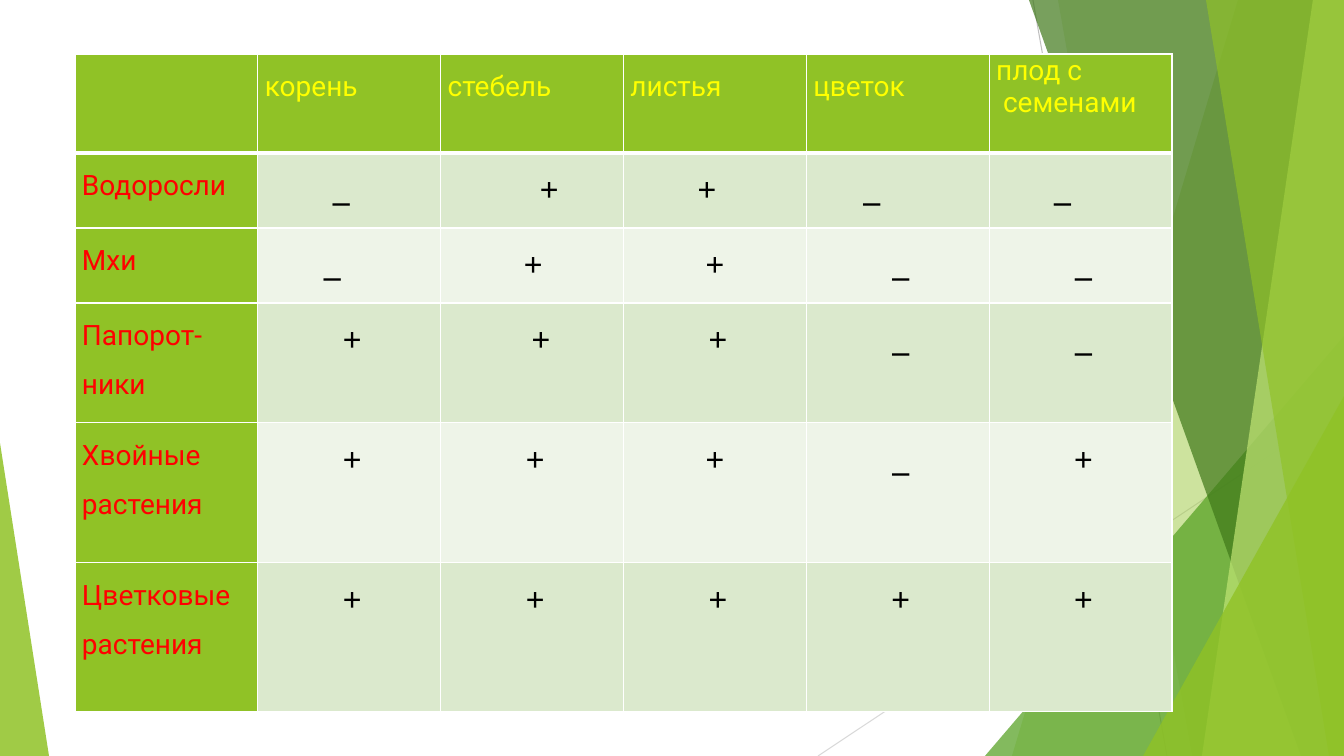
from lxml.etree import SubElement
from pptx import Presentation
from pptx.dml.color import RGBColor
from pptx.enum.shapes import MSO_CONNECTOR, MSO_SHAPE
from pptx.enum.text import PP_ALIGN
from pptx.oxml import parse_xml
from pptx.oxml.ns import nsdecls, qn
from pptx.util import Emu, Pt

EMU_PER_PX = 914400 / 100.8
COLORS = {
    "green": "90C226", "leaf": "54A021", "forest": "3F7819", "lime": "C0E474",
    "gray": "BFBFBF", "light gray": "D9D9D9", "white": "FFFFFF",
    "odd row": "DBE9CD", "even row": "EEF4E8",
    "yellow": "FFFF00", "red": "FF0000", "black": "000000",
}
FACET_LINES = [((1033, 0), (1167, 756), "gray"), ((1344, 406), (818, 756), "light gray")]
FACETS = [
    ("outline", [(1238, 0), (1344, 0), (1344, 756), (1012, 756)], "green", 30),
    ("outline", [(1058, 0), (1344, 0), (1344, 756), (1192, 756)], "green", 20),
    ("triangle", (985, 336, 359, 420, 1), "leaf", 72),
    ("outline", [(1029, 0), (1344, 0), (1344, 756), (1301, 756)], "forest", 70),
    ("outline", [(1313, 0), (1344, 0), (1344, 756), (1202, 756)], "lime", 70),
    ("outline", [(1206, 0), (1344, 0), (1344, 756), (1329, 756)], "green", 65),
    ("triangle", (1143, 396, 201, 360, 1), "green", 80),
    ("triangle", (0, 443, 49, 313, 0), "green", 85),
]
HEADERS = ["", "корень", "стебель", "листья", "цветок", "плод с\n семенами"]
PLANTS = [
    ("Водоросли", "_++__", (-8, 17, -8, -26, -18)),
    ("Мхи", "_++__", (-17, 1, 0, 3, 3)),
    ("Папорот-ники", "+++__", (3, 9, 3, 3, 3)),
    ("Хвойные растения", "+++_+", (3, 3, 0, 3, 3)),
    ("Цветковые растения", "+++++", (3, 3, 3, 3, 3)),
]
ROW_HEIGHTS = [99, 75, 75, 120, 140, 149]
CELL_MARGIN = 7


def px(length):
    """Turn pixels into EMU."""
    return Emu(round(length * EMU_PER_PX))


def color(name):
    """Look up a colour by its name."""
    return RGBColor.from_string(COLORS[name])


def paint(shape, fill, opacity):
    """Give a shape a translucent fill without line or shadow."""
    shape.shadow.inherit = False
    shape.line.fill.background()
    shape.fill.solid()
    shape.fill.fore_color.rgb = color(fill)
    tint = shape._element.spPr.find(qn("a:solidFill"))[0]
    SubElement(tint, qn("a:alpha"), val=str(opacity * 1000))


def add_facets(page, left, top):
    """Draw the thin lines and the green facets at both slide edges."""
    for (x1, y1), (x2, y2), stroke in FACET_LINES:
        line = page.shapes.add_connector(
            MSO_CONNECTOR.STRAIGHT,
            px(left + x1), px(top + y1), px(left + x2), px(top + y2))
        line.line.color.rgb = color(stroke)
        line.line.width = Pt(0.75)
        SubElement(line._element.spPr, qn("a:effectLst"))
    for kind, geometry, fill, opacity in FACETS:
        if kind == "outline":
            points = [(left + x, top + y) for x, y in geometry]
            builder = page.shapes.build_freeform(*points[0], scale=EMU_PER_PX)
            builder.add_line_segments(points[1:], close=True)
            facet = builder.convert_to_shape()
        else:
            x, y, width, height, apex = geometry
            facet = page.shapes.add_shape(
                MSO_SHAPE.ISOSCELES_TRIANGLE,
                px(left + x), px(top + y), px(width), px(height))
            facet.adjustments[0] = apex
        paint(facet, fill, opacity)


def set_borders(cell, bottom):
    """Draw white borders, with the bottom one of the given points."""
    properties = cell._tc.get_or_add_tcPr()
    widths = {"lnL": 1, "lnR": 1, "lnT": 1, "lnB": bottom}
    for position, (side, points) in enumerate(widths.items()):
        properties.insert(position, parse_xml(
            f'<a:{side} {nsdecls("a")} w="{Pt(points)}"><a:solidFill>'
            f'<a:srgbClr val="{COLORS["white"]}"/></a:solidFill></a:{side}>'))


def fill_cell(cell, text, fill, ink, size=20, font="Roboto", bold=False,
              align=PP_ALIGN.JUSTIFY, spacing=1.5, shift=0, bottom=1):
    """Write a cell, its text moved sideways by shift."""
    cell.fill.solid()
    cell.fill.fore_color.rgb = color(fill)
    cell.margin_left = px(CELL_MARGIN + max(0, 2 * shift))
    cell.margin_right = px(CELL_MARGIN + max(0, -2 * shift))
    cell.margin_top = cell.margin_bottom = 0
    cell.text = text
    for para in cell.text_frame.paragraphs:
        para.alignment = align
        para.line_spacing = spacing
        para.font.size = Pt(size)
        para.font.name = font
        para.font.bold = bold
        para.font.color.rgb = color(ink)
    set_borders(cell, bottom)


def add_plant_table(page, left, top, width):
    """Place the table of plant groups and their organs."""
    frame = page.shapes.add_table(
        len(ROW_HEIGHTS), len(HEADERS),
        px(left), px(top), px(width), px(sum(ROW_HEIGHTS)))
    table = frame.table
    for column in table.columns:
        column.width = px(width / len(HEADERS))
    for row, height in zip(table.rows, ROW_HEIGHTS):
        row.height = px(height)
    for index, header in enumerate(HEADERS):
        two_lines = "\n" in header
        fill_cell(table.cell(0, index), header, "green", "yellow", bottom=3,
                  align=PP_ALIGN.LEFT if two_lines else PP_ALIGN.JUSTIFY,
                  spacing=1.0 if two_lines else 1.5)
    for row, (plant, signs, shifts) in enumerate(PLANTS, 1):
        fill_cell(table.cell(row, 0), plant, "green", "red")
        band = "odd row" if row % 2 else "even row"
        for index, (sign, shift) in enumerate(zip(signs, shifts), 1):
            fill_cell(table.cell(row, index), sign, band, "black", size=24,
                      font="Times New Roman", bold=True,
                      align=PP_ALIGN.CENTER, shift=shift)


def main():
    """Build the slide and save it."""
    deck = Presentation()
    deck.slide_width, deck.slide_height = px(1344), px(756)
    page = deck.slides.add_slide(deck.slide_layouts[6])
    add_facets(page, 0, 0)
    add_plant_table(page, 75, 54, 1097)
    deck.save("out.pptx")


if __name__ == "__main__":
    main()
